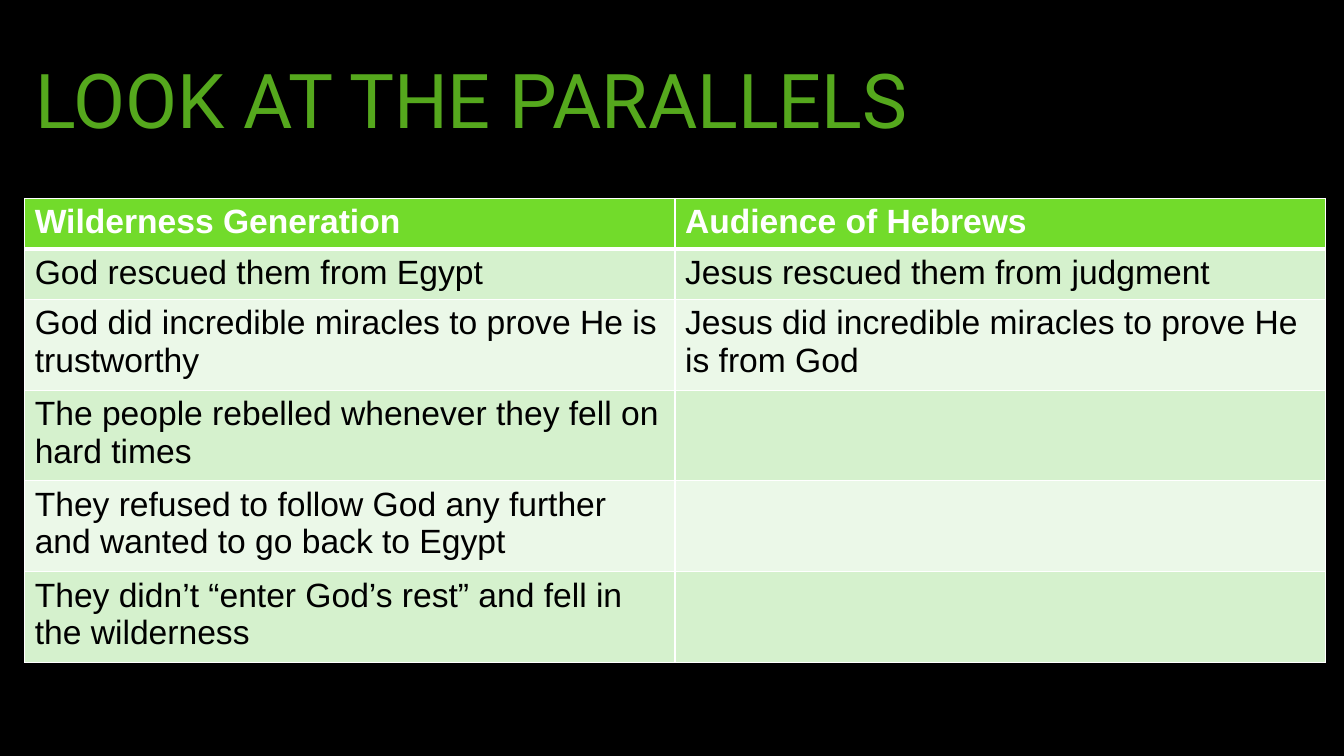
from lxml import etree
from pptx import Presentation
from pptx.dml.color import RGBColor
from pptx.enum.text import MSO_ANCHOR
from pptx.oxml.ns import qn
from pptx.util import Pt

MIDDLE = MSO_ANCHOR.MIDDLE
TOP = MSO_ANCHOR.TOP
BLACK, WHITE = "000000", "FFFFFF"
GREEN, LIME = "55A81D", "72DB2B"
BANDS = "D5F1CD", "EBF8E8"
ROWS = [
    ("Wilderness Generation", "Audience of Hebrews"),
    ("God rescued them from Egypt", "Jesus rescued them from judgment"),
    ("God did incredible miracles to prove He is trustworthy",
     "Jesus did incredible miracles to prove He is from God"),
    ("The people rebelled whenever they fell on hard times", ""),
    ("They refused to follow God any further and wanted to go back to Egypt", ""),
    ("They didn’t “enter God’s rest” and fell in the wilderness", ""),
]
HEIGHTS = [33.9] * 2 + [60.7] * 4


def paint(fill, color):
    fill.solid()
    fill.fore_color.rgb = RGBColor.from_string(color)


def write(frame, text, font="Arial", size=24, color=BLACK, bold=False,
          anchor=TOP, space=None):
    frame.word_wrap = True
    frame.vertical_anchor = anchor
    para = frame.paragraphs[0]
    if space:
        para.line_spacing = space
    if text:
        run = para.add_run()
        run.text = text
        run.font.name = font
        run.font.size = Pt(size)
        run.font.bold = bold
        paint(run.font.fill, color)


def border(cell, top, bottom):
    props = cell._tc.get_or_add_tcPr()
    widths = {"a:lnL": 1, "a:lnR": 1, "a:lnT": top, "a:lnB": bottom}
    for index, (tag, width) in enumerate(widths.items()):
        line = etree.Element(qn(tag), w=str(Pt(width)))
        fill = etree.SubElement(line, qn("a:solidFill"))
        etree.SubElement(fill, qn("a:srgbClr"), val=WHITE)
        props.insert(index, line)


def title(slide, left, top, width, height):
    box = slide.shapes.add_textbox(Pt(left), Pt(top), Pt(width), Pt(height))
    write(box.text_frame, "LOOK AT THE PARALLELS", font="Roboto", size=54,
          color=GREEN, anchor=MIDDLE, space=0.9)


def grid(slide, left, top, width):
    table = slide.shapes.add_table(
        len(ROWS), 2, Pt(left), Pt(top), Pt(width), Pt(sum(HEIGHTS))).table
    for column in table.columns:
        column.width = Pt(width / 2)
    for r, (texts, height) in enumerate(zip(ROWS, HEIGHTS)):
        table.rows[r].height = Pt(height)
        head = r == 0
        for c, text in enumerate(texts):
            cell = table.cell(r, c)
            paint(cell.fill, LIME if head else BANDS[(r - 1) % 2])
            border(cell, 3 if r == 1 else 1, 3 if head else 1)
            write(cell.text_frame, text, bold=head,
                  color=WHITE if head else BLACK)


def main():
    deck = Presentation()
    deck.slide_width, deck.slide_height = Pt(960), Pt(540)
    slide = deck.slides.add_slide(deck.slide_layouts[6])
    paint(slide.background.fill, BLACK)
    title(slide, 18, 16, 929, 116.5)
    grid(slide, 17.7, 141.8, 929)
    deck.save("out.pptx")


if __name__ == "__main__":
    main()
